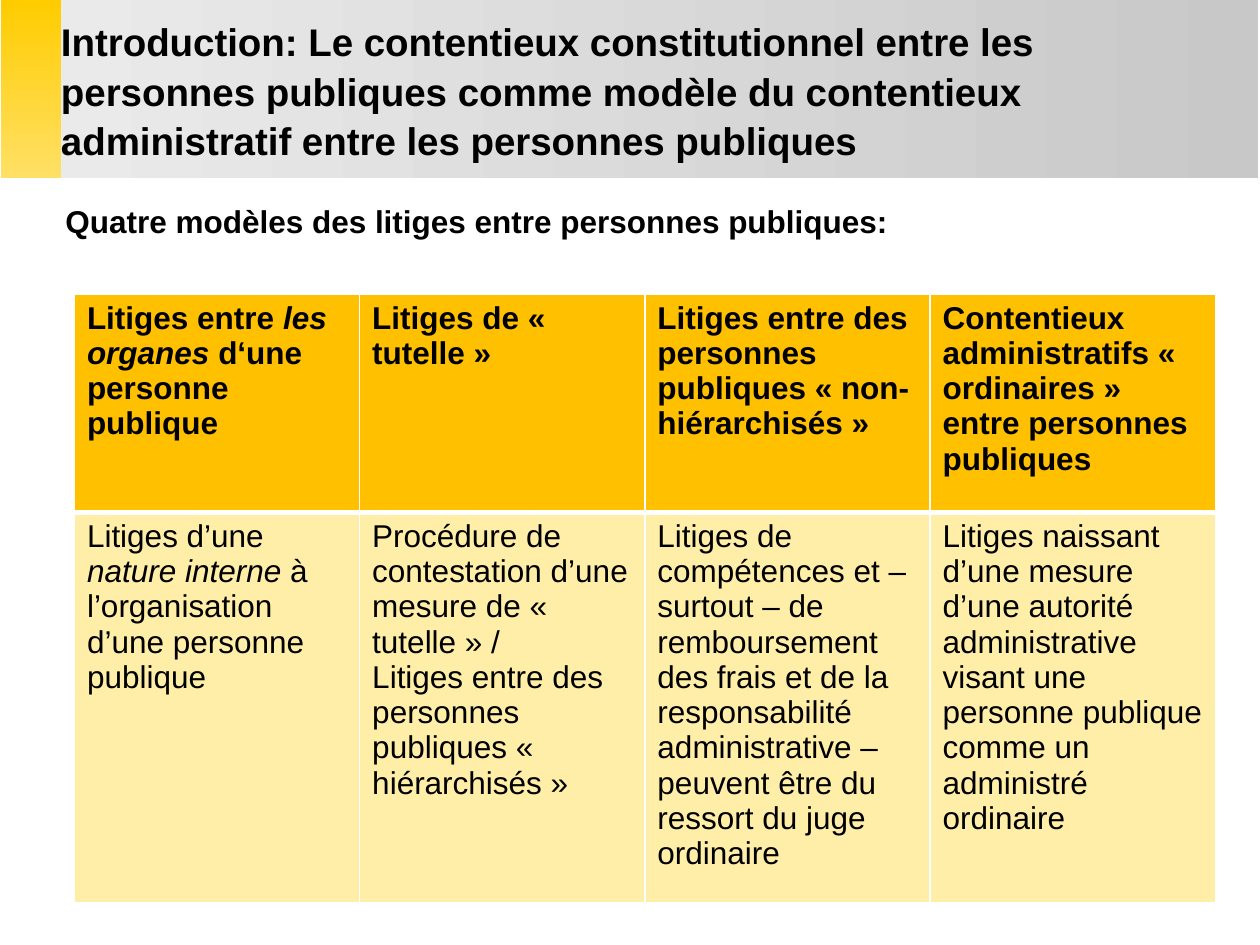
from lxml import etree
from pptx import Presentation
from pptx.dml.color import RGBColor
from pptx.enum.shapes import MSO_SHAPE
from pptx.enum.text import MSO_ANCHOR, PP_ALIGN
from pptx.oxml.ns import qn
from pptx.util import Cm, Pt

RECTANGLE = MSO_SHAPE.RECTANGLE
MIDDLE = MSO_ANCHOR.MIDDLE
LEFT = PP_ALIGN.LEFT

COLORS = {
    "text": "000000",
    "border": "FFFFFF",
    "header": "FFC000",
    "body": "FFEEA7",
    "yellow_top": "FFCC00",
    "yellow_bottom": "FFE066",
    "grey_left": "EAEAEA",
    "grey_right": "C8C8C8",
}


def add_band(left, width, start, end, angle):
    band = slide.shapes.add_shape(RECTANGLE, Cm(left), Cm(0), Cm(width), Cm(3.6))
    band.shadow.inherit = False
    band.line.fill.background()
    band.fill.gradient()
    band.fill.gradient_angle = angle
    for stop, name in zip(band.fill.gradient_stops, (start, end)):
        stop.color.rgb = RGBColor.from_string(COLORS[name])
    return band


def write_paragraph(paragraph, runs, size, bold):
    """Write the runs; every second one is italic."""
    paragraph.alignment = LEFT
    paragraph.font.name = "Arial"
    paragraph.font.size = Pt(size)
    paragraph.font.bold = bold
    paragraph.font.color.rgb = RGBColor.from_string(COLORS["text"])
    for index, text in enumerate(runs):
        run = paragraph.add_run()
        run.text = text
        if index % 2:
            run.font.italic = True


presentation = Presentation()
presentation.slide_width = Cm(25.4)
presentation.slide_height = Cm(19.05)
slide = presentation.slides.add_slide(presentation.slide_layouts[6])

# Yellow band at the top left
add_band(0.02, 1.27, "yellow_top", "yellow_bottom", 270)

# Subtitle
subtitle = slide.shapes.add_textbox(Cm(1.27), Cm(3.94), Cm(23.8), Cm(1.02))
subtitle.text_frame.word_wrap = True
subtitle.text_frame.margin_left = Cm(0.05)
paragraph = subtitle.text_frame.paragraphs[0]
paragraph.space_before = Pt(12)
write_paragraph(paragraph, ["Quatre modèles des litiges entre personnes publiques:"], 18, True)

# Table: rows of cells, cells of paragraphs, paragraphs of runs
ROWS = [
    [
        [["Litiges entre ", "les organes", " d‘une personne publique"]],
        [["Litiges de « tutelle »"]],
        [["Litiges entre des personnes publiques « non-hiérarchisés »"]],
        [["Contentieux administratifs « ordinaires » entre personnes publiques"]],
    ],
    [
        [["Litiges d’une ", "nature interne ", "à l’organisation d’une personne publique"]],
        [
            ["Procédure de contestation d’une mesure de « tutelle » /"],
            ["Litiges entre des personnes publiques « hiérarchisés »"],
        ],
        [["Litiges de compétences et – surtout – de remboursement des frais et de la "
          "responsabilité administrative – peuvent être du ressort du juge ordinaire"]],
        [["Litiges naissant d’une mesure d’une autorité administrative visant une "
          "personne publique comme un administré ordinaire"]],
    ],
]
FILLS = ["header", "body"]
# Border widths in points; the rule under the header is thicker
BORDERS = [
    {"lnL": 1, "lnR": 1, "lnT": 1, "lnB": 3},
    {"lnL": 1, "lnR": 1, "lnT": 3, "lnB": 1},
]

table = slide.shapes.add_table(2, 4, Cm(1.5), Cm(5.93), Cm(23), Cm(12.27)).table
for row, height in zip(table.rows, (4.4, 7.87)):
    row.height = Cm(height)

for row_index, cells in enumerate(ROWS):
    for column_index, paragraphs in enumerate(cells):
        cell = table.cell(row_index, column_index)
        cell.fill.solid()
        cell.fill.fore_color.rgb = RGBColor.from_string(COLORS[FILLS[row_index]])
        for index, runs in enumerate(paragraphs):
            paragraph = cell.text_frame.add_paragraph() if index else cell.text_frame.paragraphs[0]
            write_paragraph(paragraph, runs, 18, row_index == 0)

        # Borders stand before the fill in the cell properties
        properties = cell._tc.get_or_add_tcPr()
        for position, (side, width) in enumerate(BORDERS[row_index].items()):
            border = etree.Element(qn(f"a:{side}"), w=str(Pt(width)))
            fill = etree.SubElement(border, qn("a:solidFill"))
            etree.SubElement(fill, qn("a:srgbClr"), val=COLORS["border"])
            properties.insert(position, border)

# Grey title band
title = add_band(1.23, 24.13, "grey_left", "grey_right", 0)
frame = title.text_frame
frame.word_wrap = True
frame.vertical_anchor = MIDDLE
frame.margin_left = Cm(0)
frame.margin_right = Cm(1.5)
write_paragraph(
    frame.paragraphs[0],
    ["Introduction: Le contentieux constitutionnel entre les personnes publiques comme "
     "modèle du contentieux administratif entre les personnes publiques"],
    22, True)
frame.paragraphs[0].line_spacing = 1.07

presentation.save("out.pptx")
